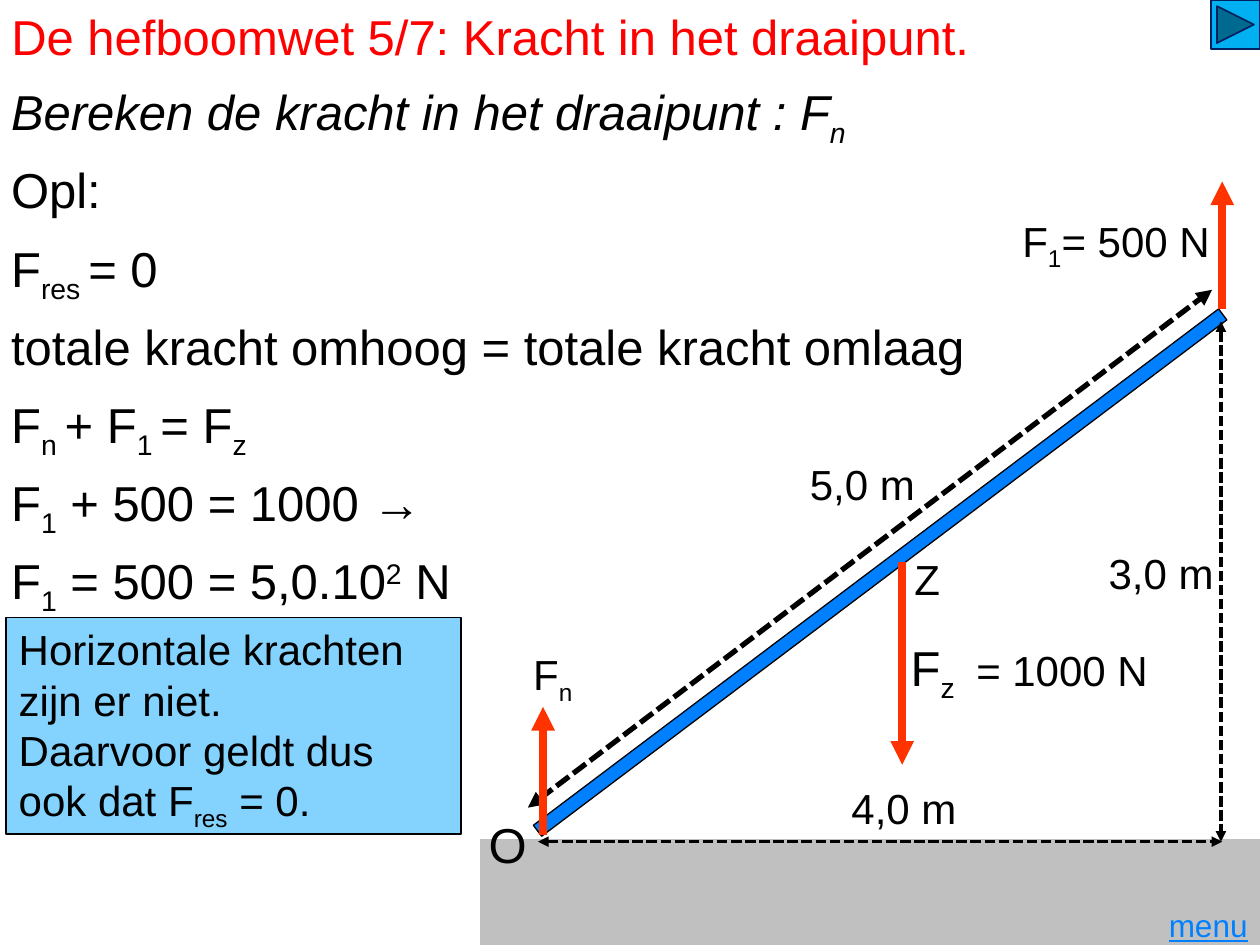
import dataclasses

import lxml.etree
import pptx
import pptx.dml.color
import pptx.enum.dml
import pptx.enum.shapes
import pptx.enum.text
import pptx.oxml.ns
import pptx.util

Inches = pptx.util.Inches
Shapes = pptx.enum.shapes.MSO_SHAPE
Align = pptx.enum.text.PP_ALIGN
Anchor = pptx.enum.text.MSO_ANCHOR
SUB, SUPER = -25000, 30000


@dataclasses.dataclass(frozen=True)
class Theme:
    font: str = "Arial"
    large: int = 28
    medium: int = 24
    small: int = 18
    ink: str = "000000"
    title: str = "FF0000"
    force: str = "FF3300"
    rod: str = "0080FF"
    ground: str = "C0C0C0"
    note: str = "83D3FE"
    button: str = "00B0F0"
    button_line: str = "002060"


def rgb(color):
    return pptx.dml.color.RGBColor.from_string(color)


def format_text(frame, paragraphs, *, font, size, color, italic=False,
                underline=False, align=Align.LEFT, anchor=Anchor.TOP):
    """Each paragraph is a list of plain strings and (text, baseline) pairs."""
    frame.word_wrap = True
    frame.vertical_anchor = anchor
    for index, pieces in enumerate(paragraphs):
        paragraph = frame.add_paragraph() if index else frame.paragraphs[0]
        paragraph.alignment = align
        for piece in pieces:
            text, baseline = (piece, 0) if isinstance(piece, str) else piece
            run = paragraph.add_run()
            run.text = text
            run.font.name = font
            run.font.size = pptx.util.Pt(size)
            run.font.color.rgb = rgb(color)
            run.font.italic = italic
            run.font.underline = underline
            if baseline:
                run._r.get_or_add_rPr().set("baseline", str(baseline))


class SlideBuilder:
    def __init__(self, slide, theme):
        self.slide = slide
        self.theme = theme

    def fill_frame(self, frame, paragraphs, **changes):
        style = dict(font=self.theme.font, size=self.theme.medium,
                     color=self.theme.ink)
        format_text(frame, paragraphs, **(style | changes))

    def title(self, text, left, top, width, height):
        shape = self.slide.shapes.title
        shape.left, shape.top = Inches(left), Inches(top)
        shape.width, shape.height = Inches(width), Inches(height)
        self.fill_frame(shape.text_frame, [[text]], size=self.theme.large,
                        color=self.theme.title)

    def text(self, pieces, left, top, width, height=0.5, **changes):
        box = self.slide.shapes.add_textbox(
            Inches(left), Inches(top), Inches(width), Inches(height))
        self.fill_frame(box.text_frame, [pieces], **changes)

    def shape(self, kind, left, top, width, height, fill, line=None,
              line_width=1, rotation=0):
        shape = self.slide.shapes.add_shape(
            kind, Inches(left), Inches(top), Inches(width), Inches(height))
        shape.shadow.inherit = False
        shape.rotation = rotation
        shape.fill.solid()
        shape.fill.fore_color.rgb = rgb(fill)
        if line:
            shape.line.color.rgb = rgb(line)
            shape.line.width = pptx.util.Pt(line_width)
        else:
            shape.line.fill.background()
        return shape

    def arrow(self, start, end, color, width, ends=("tailEnd",), dashed=False):
        connector = self.slide.shapes.add_connector(
            pptx.enum.shapes.MSO_CONNECTOR.STRAIGHT,
            *(Inches(value) for value in (*start, *end)))
        connector.line.color.rgb = rgb(color)
        connector.line.width = pptx.util.Pt(width)
        if dashed:
            connector.line.dash_style = pptx.enum.dml.MSO_LINE.SQUARE_DOT
        qn = pptx.oxml.ns.qn
        properties = connector._element.spPr
        for end_name in ends:
            lxml.etree.SubElement(properties.find(qn("a:ln")),
                                  qn(f"a:{end_name}"), type="triangle")
        lxml.etree.SubElement(properties, qn("a:effectLst"))

    def force(self, start, end):
        self.arrow(start, end, self.theme.force, 4.5)

    def dimension(self, start, end, width=2):
        self.arrow(start, end, self.theme.ink, width,
                   ends=("headEnd", "tailEnd"), dashed=True)


def draw_solution(builder):
    large = builder.theme.large
    steps = [
        ["Bereken de kracht in het draaipunt : F", ("n", SUB)],
        ["Opl:"],
        ["F", ("res ", SUB), "= 0"],
        ["totale kracht omhoog = totale kracht omlaag"],
        ["F", ("n ", SUB), "+ F", ("1 ", SUB), "= F", ("z", SUB)],
        ["F", ("1", SUB), " + 500 = 1000 →"],
        ["F", ("1", SUB), " = 500 = 5,0.10", ("2", SUPER), " N"],
    ]
    for index, pieces in enumerate(steps):
        builder.text(pieces, -0.01, 0.6 + 0.62 * index, 8.24, 0.58,
                     size=large, italic=index == 0)


def draw_lever(builder):
    theme = builder.theme
    builder.shape(Shapes.RECTANGLE, 3.81, 6.66, 6.22, 0.88, theme.ground)
    builder.shape(Shapes.RECTANGLE, 6.93, 1.14, 0.11, 6.81, theme.rod,
                  theme.ink, 0.75, rotation=53)

    builder.force((7.16, 4.46), (7.16, 6.07))
    builder.force((9.7, 2.45), (9.7, 1.44))
    builder.dimension((4.27, 6.68), (9.7, 6.68))
    builder.dimension((9.69, 2.55), (9.69, 6.68))
    builder.dimension((4.19, 6.41), (9.62, 2.3), width=3)
    builder.force((4.31, 6.63), (4.31, 5.61))

    for length, left, top in (("5,0 m", 6.33, 3.59), ("4,0 m", 6.66, 6.16),
                              ("3,0 m", 8.7, 4.3)):
        builder.text([length], left, top, 1.2)
    builder.text(["O"], 3.78, 6.41, 0.67, 0.58, size=theme.large,
                 anchor=Anchor.MIDDLE)
    builder.text(["Z"], 7.16, 4.3, 0.67, 0.58, anchor=Anchor.MIDDLE)
    builder.text(["F", ("1", SUB), "= 500 N"], 7.36, 1.66, 2.34,
                 align=Align.RIGHT)
    builder.text(["F", ("n", SUB)], 3.85, 5.1, 0.79, align=Align.RIGHT)
    builder.text(["F", ("z", SUB)], 7.13, 5.01, 0.83, 0.57, size=theme.large)
    builder.text(["= 1000 N"], 7.65, 5.07, 1.66)


def main():
    presentation = pptx.Presentation()
    presentation.slide_width = Inches(10)
    presentation.slide_height = Inches(7.5)
    theme = Theme()
    slide = presentation.slides.add_slide(presentation.slide_layouts[5])
    builder = SlideBuilder(slide, theme)

    builder.title("De hefboomwet 5/7: Kracht in het draaipunt.",
                  -0.01, 0, 10.04, 0.57)
    builder.shape(Shapes.ACTION_BUTTON_FORWARD_OR_NEXT, 9.61, 0, 0.39, 0.39,
                  theme.button, theme.button_line)
    draw_solution(builder)
    draw_lever(builder)
    builder.text(["menu"], 9.06, 7.14, 0.94, 0.4, size=theme.small,
                 color=theme.rod, underline=True, align=Align.RIGHT,
                 anchor=Anchor.MIDDLE)
    note = builder.shape(Shapes.RECTANGLE, 0.05, 4.9, 3.61, 1.72, theme.note,
                         theme.ink)
    builder.fill_frame(note.text_frame, [
        ["Horizontale krachten zijn er niet."],
        ["Daarvoor geldt dus ook dat F", ("res", SUB), " = 0."],
    ])
    presentation.save("out.pptx")


if __name__ == "__main__":
    main()
